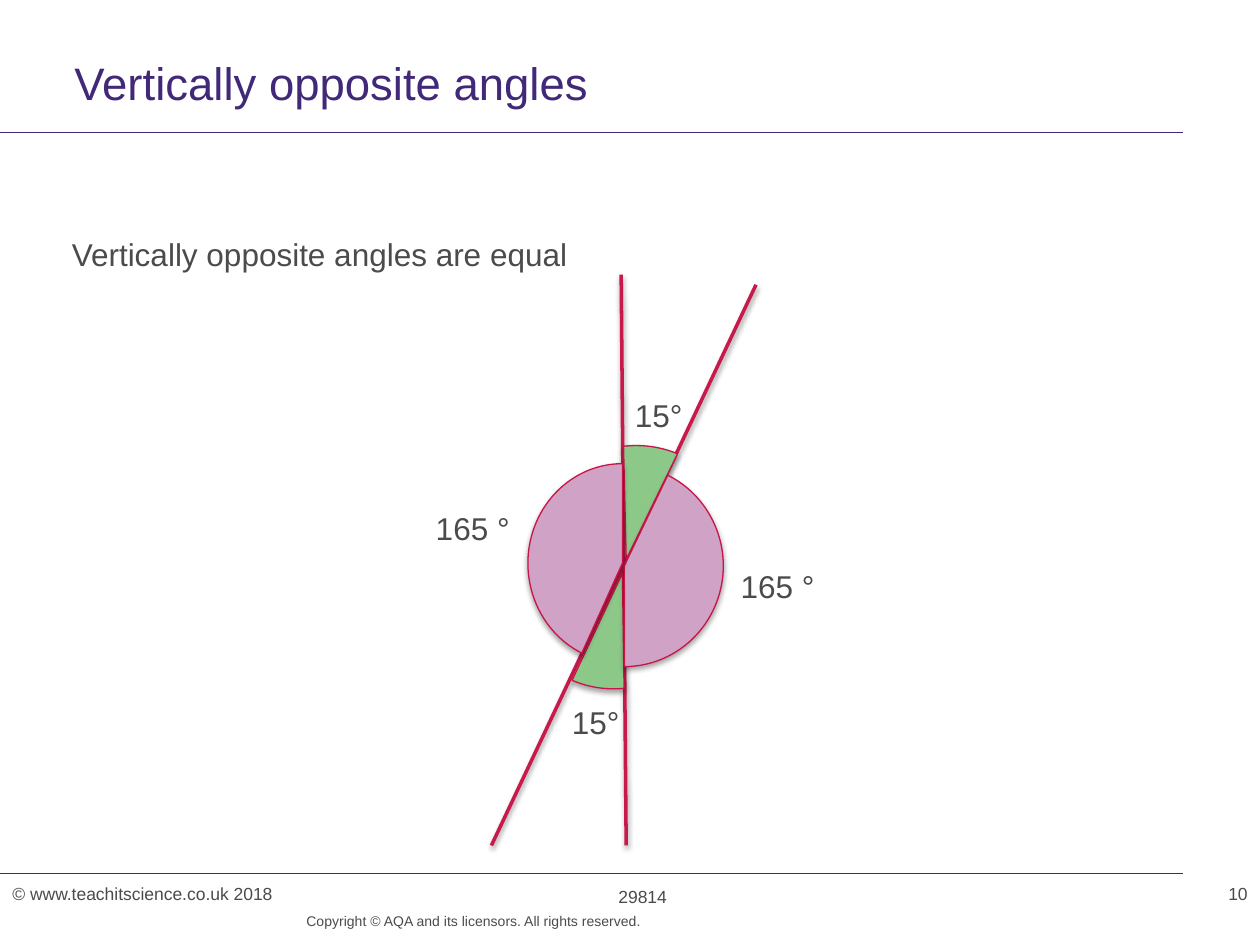
from collections import namedtuple
from dataclasses import dataclass

from lxml import etree
from pptx import Presentation
from pptx.dml.color import RGBColor
from pptx.enum.shapes import MSO_CONNECTOR, MSO_SHAPE
from pptx.enum.text import MSO_ANCHOR, MSO_AUTO_SIZE, PP_ALIGN
from pptx.oxml.ns import qn
from pptx.util import Inches, Pt

STRAIGHT = MSO_CONNECTOR.STRAIGHT
PIE = MSO_SHAPE.PIE
TOP = MSO_ANCHOR.TOP
FIT_SHAPE = MSO_AUTO_SIZE.SHAPE_TO_FIT_TEXT
LEFT, CENTER, RIGHT = PP_ALIGN.LEFT, PP_ALIGN.CENTER, PP_ALIGN.RIGHT

Box = namedtuple("Box", "left top width height")


@dataclass(frozen=True)
class Theme:
    """Colours, font and type sizes of the slide."""
    font: str = "Arial"
    purple: str = "412878"
    grey: str = "4B4B4B"
    ray: str = "C8194B"
    outline: str = "C81448"
    green: str = "8CC888"
    pink: str = "CFA2C6"
    title: int = 26
    body: int = 18
    footer: int = 10
    copyright: int = 8


THEME = Theme()
PLACEHOLDER_INSETS = (0, 0, 0.1, 0)
DEFAULT_INSETS = (0.1, 0.05, 0.1, 0.05)


def set_attributes(target, values):
    """Set each named value on the target."""
    for name, value in values.items():
        setattr(target, name, value)


def add_text(slide, box, text, size, color=THEME.grey, align=LEFT,
             insets=DEFAULT_INSETS, spacing=None, wrap=True, fit=False):
    """Add a one-paragraph text box."""
    frame = slide.shapes.add_textbox(*map(Inches, box)).text_frame
    left, top, right, bottom = map(Inches, insets)
    set_attributes(frame, {
        "margin_left": left, "margin_top": top, "margin_right": right,
        "margin_bottom": bottom, "word_wrap": wrap, "vertical_anchor": TOP,
        "auto_size": FIT_SHAPE if fit else MSO_AUTO_SIZE.NONE,
    })
    paragraph = frame.paragraphs[0]
    set_attributes(paragraph, {
        "text": text, "alignment": align,
        "line_spacing": Pt(spacing) if spacing else None,
    })
    set_attributes(paragraph.font, {"name": THEME.font, "size": Pt(size)})
    paragraph.font.color.rgb = RGBColor.from_string(color)


def set_shadow(shape, opacity=0, distance=0):
    """Give a shape a soft downward shadow, or none at zero opacity."""
    effects = etree.SubElement(shape._element.spPr, qn("a:effectLst"))
    if opacity:
        shadow = etree.SubElement(effects, qn("a:outerShdw"), {
            "blurRad": str(Pt(3.1)), "dist": str(Pt(distance)),
            "dir": "5400000", "rotWithShape": "0"})
        color = etree.SubElement(shadow, qn("a:srgbClr"), val="000000")
        etree.SubElement(color, qn("a:alpha"), val=str(opacity * 1000))


def add_line(slide, start, end, color, width, **shadow):
    """Add a straight line between two points."""
    line = slide.shapes.add_connector(STRAIGHT, *map(Inches, (*start, *end)))
    line.line.color.rgb = RGBColor.from_string(color)
    line.line.width = Pt(width)
    set_shadow(line, **shadow)


def add_sector(slide, box, rotation, angles, color):
    """Add an outlined pie sector."""
    sector = slide.shapes.add_shape(PIE, *map(Inches, box))
    sector.rotation = rotation
    sector.adjustments[0], sector.adjustments[1] = angles
    sector.fill.solid()
    sector.fill.fore_color.rgb = RGBColor.from_string(color)
    sector.line.color.rgb = RGBColor.from_string(THEME.outline)
    sector.line.width = Pt(0.75)
    set_shadow(sector, opacity=35, distance=1.8)


def add_header(slide, box):
    """Place the title and the rule at the foot of the box."""
    bottom = box.top + box.height
    add_line(slide, (box.left, bottom), (box.left + box.width, bottom),
             THEME.purple, 0.6)
    add_text(slide, (box.left + 0.59, box.top + 0.48, box.width - 0.59, 0.47),
             "Vertically opposite angles", THEME.title, THEME.purple,
             insets=PLACEHOLDER_INSETS, spacing=28)


def add_footer(slide, box):
    """Place the footer rule, its three fields and the copyright line."""
    add_line(slide, (box.left, box.top), (box.left + 9.39, box.top),
             THEME.purple, 0.6)
    width = 3.82
    fields = (
        (0, 0.03, "© www.teachitscience.co.uk 2018", LEFT),
        (3.19, 0.05, "29814", CENTER),
        (box.width - width, 0.03, "10", RIGHT),
    )
    for x, y, text, align in fields:
        add_text(slide, (box.left + x, box.top + y, width, 0.27), text,
                 THEME.footer, align=align, fit=True)
    add_text(slide, (box.left + 2.16, box.top + 0.31, 2.93, 0.26),
             "Copyright © AQA and its licensors. All rights reserved.",
             THEME.copyright, align=RIGHT, insets=(0, 0, 0, 0), spacing=10)


def add_statement(slide, box):
    """Place the rule about the angles."""
    add_text(slide, box, "Vertically opposite angles are equal", THEME.body,
             insets=PLACEHOLDER_INSETS, spacing=20)


def add_angle_diagram(slide, box):
    """Place two crossing lines, their four sectors and the angle labels."""
    def place(x, y):
        return box.left + x, box.top + y

    for start, end in (((1.57, 0), (1.61, 4.53)), ((2.64, 0.08), (0.54, 4.53))):
        add_line(slide, place(*start), place(*end), THEME.ray, 2,
                 opacity=38, distance=1.6)

    sectors = (
        (0.75, 1.32, 1.72, 1.88, 43, (135.38, 151.71), THEME.green),
        (0.72, 1.43, 1.72, 1.88, 213.5, (141.42, 157.02), THEME.green),
        (0.81, 1.51, 1.57, 1.6, 180, (69.37, 162), THEME.pink),
        (0.83, 1.5, 1.5, 1.58, 0, (68.59, 162), THEME.pink),
    )
    for x, y, width, height, rotation, angles, color in sectors:
        add_sector(slide, (*place(x, y), width, height), rotation, angles, color)

    labels = (
        (1.58, 0.91, 0.58, "15°"),
        (1.08, 3.35, 0.58, "15°"),
        (2.42, 2.27, 0.79, "165 °"),
        (0, 1.81, 0.79, "165 °"),
    )
    for x, y, width, text in labels:
        add_text(slide, (*place(x, y), width, 0.4), text, THEME.body,
                 wrap=False, fit=True)


def main():
    """Build and save the slide."""
    presentation = Presentation()
    presentation.slide_width = Inches(10)
    presentation.slide_height = Inches(7.5)
    slide = presentation.slides.add_slide(presentation.slide_layouts[6])
    add_header(slide, Box(0, 0, 9.39, 1.05))
    add_footer(slide, Box(0, 6.93, 10, 0.57))
    add_statement(slide, Box(0.57, 1.89, 8.8, 4.82))
    add_angle_diagram(slide, Box(3.36, 2.18, 3.21, 4.53))
    presentation.save("out.pptx")


if __name__ == "__main__":
    main()
